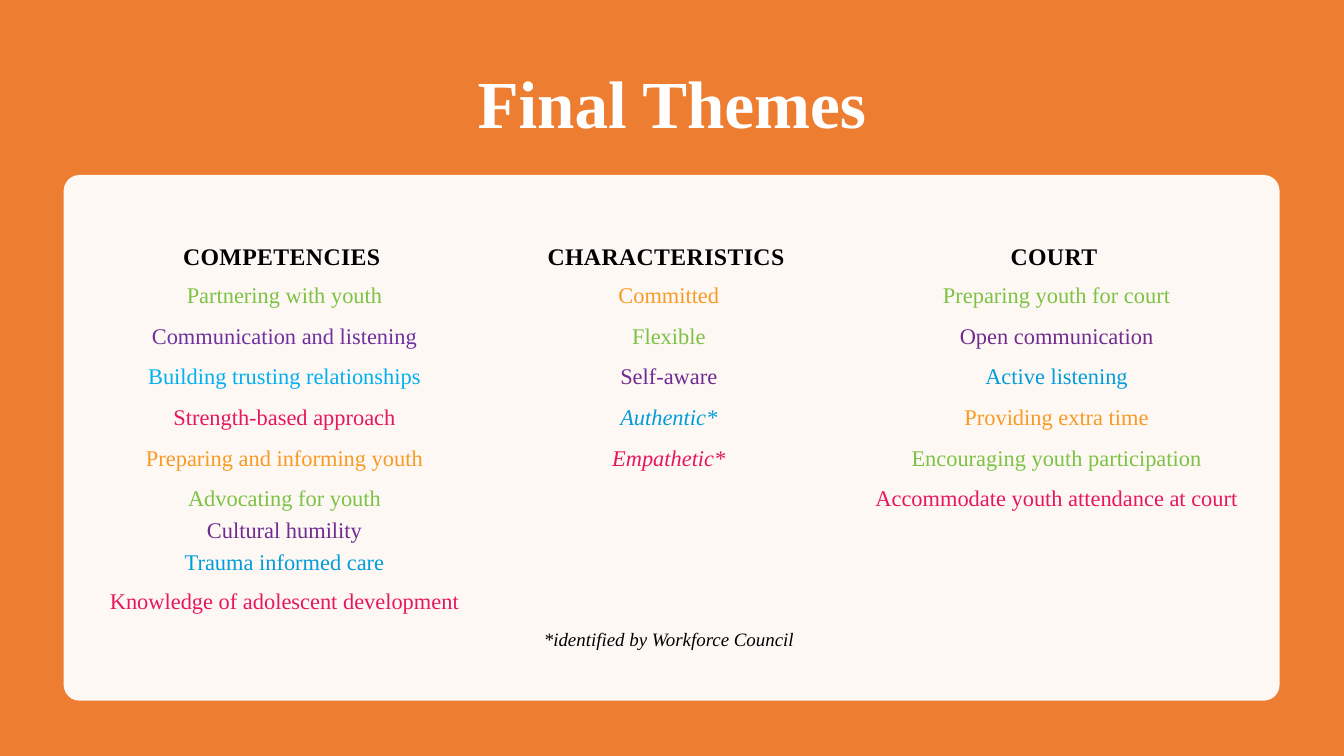
from lxml import etree
from pptx import Presentation
from pptx.dml.color import RGBColor
from pptx.enum.shapes import MSO_SHAPE
from pptx.enum.text import MSO_ANCHOR, PP_ALIGN
from pptx.oxml.ns import qn
from pptx.util import Pt

PX = 12700  # EMU per px on a 1920 x 1080 slide
FONT = "Times New Roman"
TITLE_ONLY = 5
NO_STYLE = "{2D5ABB26-0587-4C30-8999-92F81FD0307C}"
RECT, ROUND_RECT = MSO_SHAPE.RECTANGLE, MSO_SHAPE.ROUNDED_RECTANGLE
TOP, MIDDLE, BOTTOM = MSO_ANCHOR.TOP, MSO_ANCHOR.MIDDLE, MSO_ANCHOR.BOTTOM
CENTER = PP_ALIGN.CENTER

WHITE = RGBColor(0xFF, 0xFF, 0xFF)
BLACK = RGBColor(0x00, 0x00, 0x00)
BACKDROP = RGBColor(0xED, 0x7D, 0x31)
GREEN = RGBColor(0x7C, 0xC2, 0x43)
VIOLET = RGBColor(0x70, 0x30, 0xA0)
PURPLE = RGBColor(0x70, 0x2B, 0x90)
SKY = RGBColor(0x00, 0xB0, 0xF0)
BLUE = RGBColor(0x00, 0x9D, 0xDA)
PINK = RGBColor(0xE6, 0x17, 0x5E)
AMBER = RGBColor(0xF8, 0x9A, 0x23)

HEADING = {"size": Pt(34), "bold": True, "italic": False}
THEME = {"size": Pt(32), "bold": False, "italic": False}
STARRED = THEME | {"italic": True}
NOTE = STARRED | {"size": Pt(27)}

HEADINGS = ["COMPETENCIES", "CHARACTERISTICS", "COURT"]
COL_WIDTHS = [549, 549, 559]
ROW_HEIGHTS = [72] + [58] * 5 + [62] + [58] * 3

# One list per column; each cell is a list of (text, colour, format) lines.
COMPETENCIES = [
    [("Partnering with youth", GREEN, THEME)],
    [("Communication and listening", VIOLET, THEME)],
    [("Building trusting relationships", SKY, THEME)],
    [("Strength-based approach", PINK, THEME)],
    [("Preparing and informing youth", AMBER, THEME)],
    [("Advocating for youth", GREEN, THEME),
     ("Cultural humility", PURPLE, THEME),
     ("Trauma informed care", BLUE, THEME)],
    [("Knowledge of adolescent development", PINK, THEME)],
]
CHARACTERISTICS = [
    [("Committed", AMBER, THEME)],
    [("Flexible", GREEN, THEME)],
    [("Self-aware", PURPLE, THEME)],
    [("Authentic*", BLUE, STARRED)],
    [("Empathetic*", PINK, STARRED)],
    [],
    [],
    [("*identified by Workforce Council", BLACK, NOTE)],
]
COURT = [
    [("Preparing youth for court", GREEN, THEME)],
    [("Open communication", PURPLE, THEME)],
    [("Active listening", BLUE, THEME)],
    [("Providing extra time", AMBER, THEME)],
    [("Encouraging youth participation", GREEN, THEME)],
    [("Accommodate youth attendance at court", PINK, THEME)],
]


class Deck:
    """Holds the style and the current slide."""

    def __init__(self, prs):
        self.slide = prs.slides.add_slide(prs.slide_layouts[TITLE_ONLY])

    def box(self, *lengths):
        return [n * PX for n in lengths]

    def text(self, p, text, color, fmt):
        p.alignment = CENTER
        r = p.add_run()
        r.text = text
        r.font.name = FONT
        r.font.color.rgb = color
        for name, value in fmt.items():
            setattr(r.font, name, value)
        return r

    def panel(self, kind, box, color, opacity=100, radius=None):
        s = self.slide.shapes.add_shape(kind, *self.box(*box))
        s.shadow.inherit = False
        s.fill.solid()
        s.fill.fore_color.rgb = color
        s.line.fill.background()
        if radius is not None:
            s.adjustments[0] = radius
        if opacity < 100:
            rgb = s._element.spPr.find(".//" + qn("a:srgbClr"))
            etree.SubElement(rgb, qn("a:alpha"), val=str(opacity * 1000))

    def title(self, text, box):
        s = self.slide.shapes.title
        s.left, s.top, s.width, s.height = self.box(*box)
        s._element.getparent().append(s._element)  # in front of the backdrop
        tf = s.text_frame
        tf.word_wrap = True
        tf.vertical_anchor = MIDDLE
        p = tf.paragraphs[0]
        p.line_spacing = 0.9
        p.space_after = Pt(6)
        self.text(p, text, WHITE, {"size": Pt(96), "bold": True})

    def table(self, left, top, widths, heights):
        size = (left, top, sum(widths), sum(heights))
        frame = self.slide.shapes.add_table(len(heights), len(widths), *self.box(*size))
        table = frame.table
        table.first_row = table.horz_banding = False
        table._tbl.tblPr.find(qn("a:tableStyleId")).text = NO_STYLE
        for col, width in zip(table.columns, widths):
            col.width = width * PX
        for row, height in zip(table.rows, heights):
            row.height = height * PX
        for cell in table.iter_cells():
            cell.fill.background()
        return table

    def cell(self, cell, lines, anchor=TOP, top=0, right=10, tracking=0):
        """Fill a cell; tracking is in hundredths of a point."""
        cell.vertical_anchor = anchor
        margins = {"left": 10, "top": top, "right": right, "bottom": 14}
        for side, n in margins.items():
            setattr(cell, "margin_" + side, n * PX)
        tf = cell.text_frame
        for i, line in enumerate(lines):
            p = tf.add_paragraph() if i else tf.paragraphs[0]
            p.line_spacing = 1.15
            if i:
                p.space_before = Pt(5)
            r = self.text(p, *line)
            if tracking:
                r.font._element.set("spc", str(tracking))


def main():
    prs = Presentation()
    prs.slide_width, prs.slide_height = 1920 * PX, 1080 * PX
    deck = Deck(prs)
    deck.panel(RECT, (0, 0, 1920, 1080), BACKDROP)
    deck.title("Final Themes", (132, 73, 1656, 158))
    deck.panel(ROUND_RECT, (91, 250, 1737, 751), WHITE, opacity=95, radius=0.03)

    table = deck.table(132, 328, COL_WIDTHS, ROW_HEIGHTS)
    columns = [COMPETENCIES, CHARACTERISTICS, COURT]
    for c, (heading, column) in enumerate(zip(HEADINGS, columns)):
        deck.cell(table.cell(0, c), [(heading, BLACK, HEADING)],
                  anchor=BOTTOM, top=14, right=18, tracking=60)
        for r, lines in enumerate(column, start=1):
            deck.cell(table.cell(r, c), lines)
    prs.save("out.pptx")


if __name__ == "__main__":
    main()
